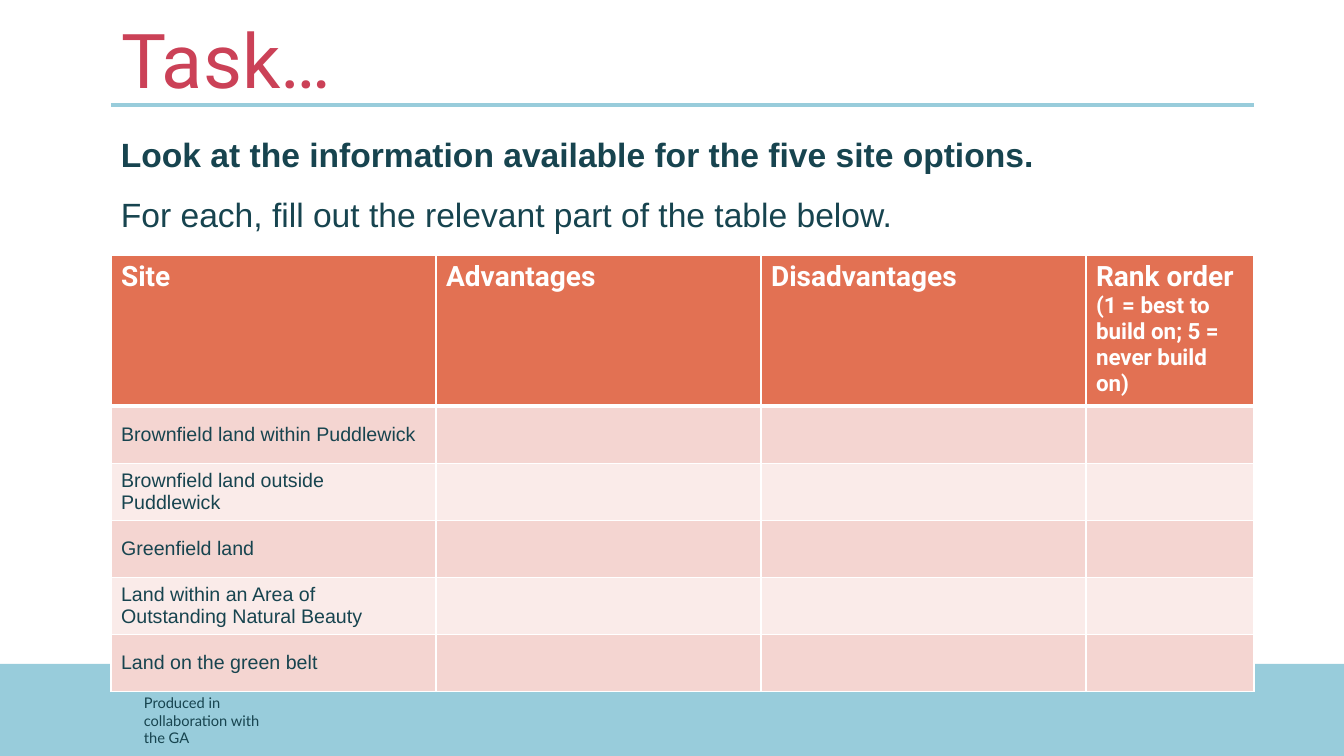
from lxml import etree
from pptx import Presentation
from pptx.dml.color import RGBColor
from pptx.enum.shapes import MSO_CONNECTOR, MSO_SHAPE
from pptx.enum.text import MSO_ANCHOR, MSO_AUTO_SIZE, PP_ALIGN
from pptx.oxml.ns import qn
from pptx.util import Pt

RECTANGLE, STRAIGHT = MSO_SHAPE.RECTANGLE, MSO_CONNECTOR.STRAIGHT
TOP, MIDDLE, BOTTOM = MSO_ANCHOR.TOP, MSO_ANCHOR.MIDDLE, MSO_ANCHOR.BOTTOM
LEFT, NO_AUTOFIT = PP_ALIGN.LEFT, MSO_AUTO_SIZE.NONE
PX = 9144000 // 1008  # EMU in one px, at 100.8 px to the inch
SKY, TEAL, WHITE = "98CCDB", "17444F", "FFFFFF"
ORANGE, ROSE, PALE_ROSE = "E27153", "F4D5D1", "FAEBE9"
MARGIN, CONTENT_WIDTH = 111, 1143


def rgb(value):
    return RGBColor.from_string(value)


def write(frame, text, size, font="Arial", color=TEAL, bold=False, before=0, add=False):
    paragraph = frame.add_paragraph() if add else frame.paragraphs[0]
    paragraph.alignment = LEFT
    paragraph.space_before = Pt(before)
    run = paragraph.add_run()
    run.text = text
    run.font.size, run.font.name, run.font.bold = Pt(size), font, bold
    run.font.color.rgb = rgb(color)


prs = Presentation()
prs.slide_width, prs.slide_height = 1344 * PX, 756 * PX
slide = prs.slides.add_slide(prs.slide_layouts[5])
shapes = slide.shapes

# Footer band and credit
band = shapes.add_shape(RECTANGLE, 0, 664 * PX, 1344 * PX, 92 * PX)
band.shadow.inherit = False
band.fill.solid()
band.fill.fore_color.rgb = rgb(SKY)
band.line.fill.background()
credit = shapes.add_textbox(134 * PX, 689 * PX, 138 * PX, 62 * PX).text_frame
credit.word_wrap = True
write(credit, "Produced in collaboration with the GA", 10.5, font="Lato")

# Title and the rule under it
title = shapes.title
title.left, title.top = MARGIN * PX, 7 * PX
title.width, title.height = CONTENT_WIDTH * PX, 99 * PX
heading = title.text_frame
heading.auto_size = NO_AUTOFIT
heading.vertical_anchor = BOTTOM
heading.margin_bottom = 2 * PX
write(heading, "Task…", 54, font="Roboto", color="CB4157")
rule = shapes.add_connector(STRAIGHT, MARGIN * PX, 105 * PX,
                            (MARGIN + CONTENT_WIDTH) * PX, 105 * PX)
rule.line.color.rgb = rgb(SKY)
rule.line.width = Pt(3.5)
etree.SubElement(rule._element.spPr, qn("a:effectLst"))

# Instructions
instructions = shapes.add_textbox(MARGIN * PX, 129 * PX, CONTENT_WIDTH * PX, 112 * PX).text_frame
instructions.word_wrap = True
write(instructions, "Look at the information available for the five site options.", 24, bold=True)
write(instructions, "For each, fill out the relevant part of the table below.", 24,
      before=14, add=True)

# Table of sites
headers = ["Site", "Advantages", "Disadvantages", "Rank order"]
sites = [
    "Brownfield land within Puddlewick",
    "Brownfield land outside Puddlewick",
    "Greenfield land",
    "Land within an Area of Outstanding Natural Beauty",
    "Land on the green belt",
]
column_widths = [325, 325, 325, 168]
row_heights = [151] + [57] * len(sites)
table = shapes.add_table(len(row_heights), len(column_widths), MARGIN * PX, 255 * PX,
                         CONTENT_WIDTH * PX, sum(row_heights) * PX).table
for column, width in zip(table.columns, column_widths):
    column.width = width * PX
for r, height in enumerate(row_heights):
    table.rows[r].height = height * PX
    fill = ORANGE if r == 0 else ROSE if r % 2 else PALE_ROSE
    borders = {"lnL": 1, "lnR": 1, "lnT": 3 if r == 1 else 1, "lnB": 3 if r == 0 else 1}
    for c in range(len(column_widths)):
        cell = table.cell(r, c)
        cell.vertical_anchor = MIDDLE if r else TOP
        for side, points in borders.items():
            line = etree.SubElement(cell._tc.get_or_add_tcPr(), qn("a:" + side), w=str(Pt(points)))
            solid = etree.SubElement(line, qn("a:solidFill"))
            etree.SubElement(solid, qn("a:srgbClr"), val=WHITE)
        cell.fill.solid()
        cell.fill.fore_color.rgb = rgb(fill)
        if r == 0:
            write(cell.text_frame, headers[c], 20, font="Roboto", color=WHITE, bold=True)
        elif c == 0:
            write(cell.text_frame, sites[r - 1], 14)
write(table.cell(0, 3).text_frame, "(1 = best to build on; 5 = never build on)", 16,
      font="Roboto", color=WHITE, bold=True, add=True)

prs.save("out.pptx")
